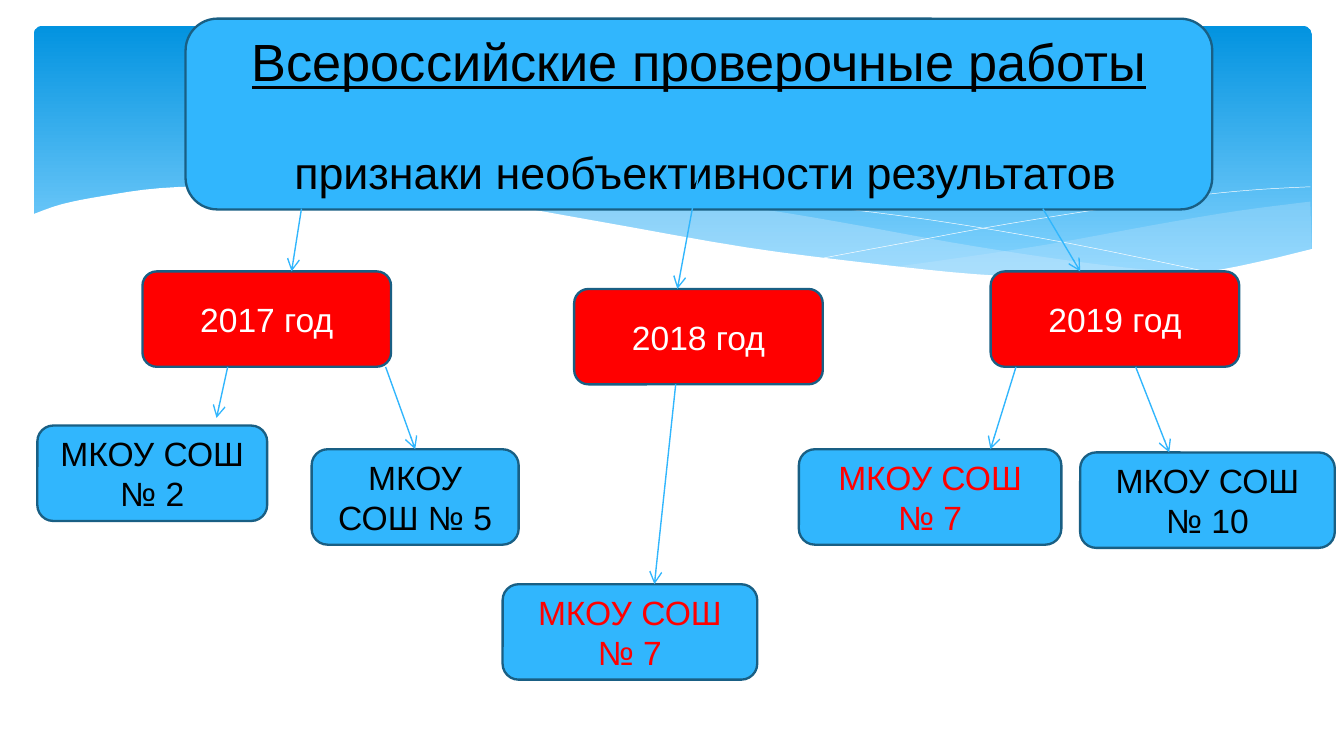
from pptx import Presentation
from pptx.util import Pt
from pptx.dml.color import RGBColor as Rgb
from pptx.enum.shapes import MSO_SHAPE as Geo, MSO_CONNECTOR as Con
from pptx.enum.text import PP_ALIGN as Align, MSO_ANCHOR as Anchor
from pptx.oxml.ns import qn
from lxml.etree import SubElement as Sub

THEME = {
    "blue": "31B6FD", "red": "FF0000", "edge": "195F84", "black": "000000",
    "white": "FFFFFF", "pale": "C6E7FC", "deep": "0293E0", "sky": "83D3FE",
    "font": "Arial", "head": 28, "sub": 24, "body": 18,
    "rim": 1.25, "thin": 0.75, "hair": 0.25,
}
SIZE = (720, 405)
PANEL = (18, 13.7, 684.7, 145.4)
TITLE = (99.4, 10, 550, 102.2)
HEADS = [("Всероссийские проверочные работы", "head", True, 0),
         (" признаки необъективности результатов", "sub", False, 28)]
BOX = 51.1
YEARS = [("2017 год", 76.3, 145.4), ("2018 год", 307.6, 154.8), ("2019 год", 530.7, 145.4)]
SCHOOLS = [("МКОУ СОШ № 2", 20, 228, 123.1, "black"),
           ("МКОУ СОШ № 5", 167, 240.7, 110.9, "black"),
           ("МКОУ СОШ № 7", 269.3, 313, 136.4, "red"),
           ("МКОУ СОШ № 7", 428, 240.7, 140.6, "red"),
           ("МКОУ СОШ № 10", 578.7, 242.4, 136.4, "black")]
ARROWS = [(161.5, 111.8, 156.2, 145.4), (374.4, 92.9, 362.9, 154.8),
          (558.7, 111.8, 578.7, 145.4), (122, 196.6, 116, 223.9),
          (206.6, 196.6, 222.4, 240.7), (362, 205.9, 350.6, 313),
          (608.4, 196.6, 626.4, 242.4), (544.3, 196.6, 530.6, 240.7)]
WAVES = [
    ("pale", 29, [
        [(702, 108), (663, 113), (620, 120.2), (561, 131), (508, 139), (476, 143.3)],
        [(476, 143.3), (507.6, 146.2), (545, 149), (586, 149.8), (621.4, 148.3),
         (651.6, 145.4), (678, 139.7), (702.7, 133.2)]]),
    ("pale", 40, [
        [(643, 146.9), (602.6, 143.3), (558, 137.5), (508.3, 129.6), (453, 119.5),
         (409.7, 112.3), (361.4, 105.8), (318, 102.2), (273.6, 100.1), (236, 100.8),
         (206, 103.7)],
        [(206, 103.7), (246, 107.3), (291, 113.8), (353.5, 125.3), (407.5, 133.9),
         (456.5, 141.1), (500.4, 146.2), (548, 149.8), (589, 150.5), (617, 149.8),
         (643, 146.9)]]),
    (None, 0, [
        [(222.5, 105.8), (247.7, 103), (288.7, 100.8), (337.7, 101.5), (383.8, 104.4),
         (437.8, 110.2), (500.4, 118.1), (572.4, 130.3), (653, 146.9)]]),
    (None, 0, [
        [(441.4, 138.2), (483.8, 130.3), (538.6, 120.2), (602, 110.2), (644.4, 104.4),
         (675.4, 101.5), (702, 100.1)]]),
    ("white", 100, [
        [(703.4, 133.2), (676.8, 139.7), (647.3, 145.4), (612, 148.3), (571, 149),
         (522.7, 146.9), (466.6, 141.1), (399.6, 132.5), (321.8, 118.8), (262.8, 108.7),
         (210.2, 103), (165.6, 100.1), (127.4, 99.4), (85.7, 100.8), (54.7, 105.1),
         (33.1, 109.4), (16.6, 115.2)],
        [(16.6, 115.2), (16.6, 177.8)], [(16.6, 177.8), (703.4, 177.8)]]),
]


def tone(key):
    return Rgb.from_string(THEME[key])


def paint(fill, key):
    fill.solid()
    fill.fore_color.rgb = tone(key)


def rule(line, key, width):
    paint(line.fill, key)
    line.width = Pt(THEME[width])


def smooth(knots, steps=4):
    ends = [knots[0], *knots, knots[-1]]
    spots = [knots[0]]
    for a, b, c, d in zip(ends, ends[1:], ends[2:], ends[3:]):
        for i in range(1, steps + 1):
            t = i / steps
            spots.append(tuple(
                q + t * (r - p) / 2 + t * t * (2 * p - 5 * q + 4 * r - s) / 2
                + t ** 3 * (3 * q - p - 3 * r + s) / 2
                for p, q, r, s in zip(a, b, c, d)))
    return spots


def wave(shapes, key, alpha, edges):
    spots = [(Pt(x), Pt(y)) for edge in edges for x, y in smooth(edge)]
    pen = shapes.build_freeform(*spots[0], scale=1.0)
    pen.add_line_segments(spots[1:], close=key is not None)
    form = pen.convert_to_shape()
    form.shadow.inherit = False
    if key is None:
        form.fill.background()
        rule(form.line, "white", "hair")
        return
    paint(form.fill, key)
    form.line.fill.background()
    if alpha < 100:
        hue = form.fill._xPr.find(qn("a:solidFill"))[0]
        Sub(hue, qn("a:alpha"), val=str(alpha * 1000))


def panel(shapes):
    form = shapes.add_shape(Geo.ROUNDED_RECTANGLE, *map(Pt, PANEL))
    form.adjustments[0] = 0.034
    form.shadow.inherit = False
    form.line.fill.background()
    form.fill.gradient()
    form.fill.gradient_angle = 270
    for stop, key, spot in zip(form.fill.gradient_stops, ("deep", "sky"), (0, 0.9)):
        stop.color.rgb = tone(key)
        stop.position = spot


def card(shapes, geo, spot, fill, ink, rows, adj=None):
    form = shapes.add_shape(geo, *map(Pt, spot))
    if adj:
        form.adjustments[0] = adj
    form.shadow.inherit = False
    paint(form.fill, fill)
    rule(form.line, "edge", "rim")
    frame = form.text_frame
    frame.word_wrap = True
    frame.vertical_anchor = Anchor.MIDDLE
    for i, (text, size, under, gap) in enumerate(rows):
        para = frame.add_paragraph() if i else frame.paragraphs[0]
        para.alignment = Align.CENTER
        para.space_before = Pt(gap)
        run = para.add_run()
        run.text = text
        look = {"name": THEME["font"], "size": Pt(THEME[size]), "underline": under}
        for name, value in look.items():
            setattr(run.font, name, value)
        run.font.color.rgb = tone(ink)
    return form


def arrow(shapes, ends, cards):
    link = shapes.add_connector(Con.STRAIGHT, *map(Pt, ends))
    rule(link.line, "blue", "thin")
    Sub(link.line._get_or_add_ln(), qn("a:tailEnd"), type="arrow")
    Sub(link._element.spPr, qn("a:effectLst"))
    x, y = map(Pt, ends[2:])
    for form in cards:
        mid = form.left + form.width / 2
        if max(abs(mid - x), abs(form.top - y)) < Pt(1):
            link.end_connect(form, 0)


def main():
    """Build the slide on signs of biased test results by year and school."""
    deck = Presentation()
    deck.slide_width, deck.slide_height = map(Pt, SIZE)
    shapes = deck.slides.add_slide(deck.slide_layouts[6]).shapes
    panel(shapes)
    for item in WAVES:
        wave(shapes, *item)
    card(shapes, Geo.FLOWCHART_ALTERNATE_PROCESS, TITLE, "blue", "black", HEADS)
    box = Geo.ROUNDED_RECTANGLE
    cards = [card(shapes, box, (x, y, 133.2, BOX), "red", "white",
                  [(text, "body", False, 0)], 0.15) for text, x, y in YEARS]
    cards += [card(shapes, box, (x, y, wide, BOX), "blue", ink,
                   [(text, "body", False, 0)]) for text, x, y, wide, ink in SCHOOLS]
    for ends in ARROWS:
        arrow(shapes, ends, cards)
    deck.save("out.pptx")


if __name__ == "__main__":
    main()
